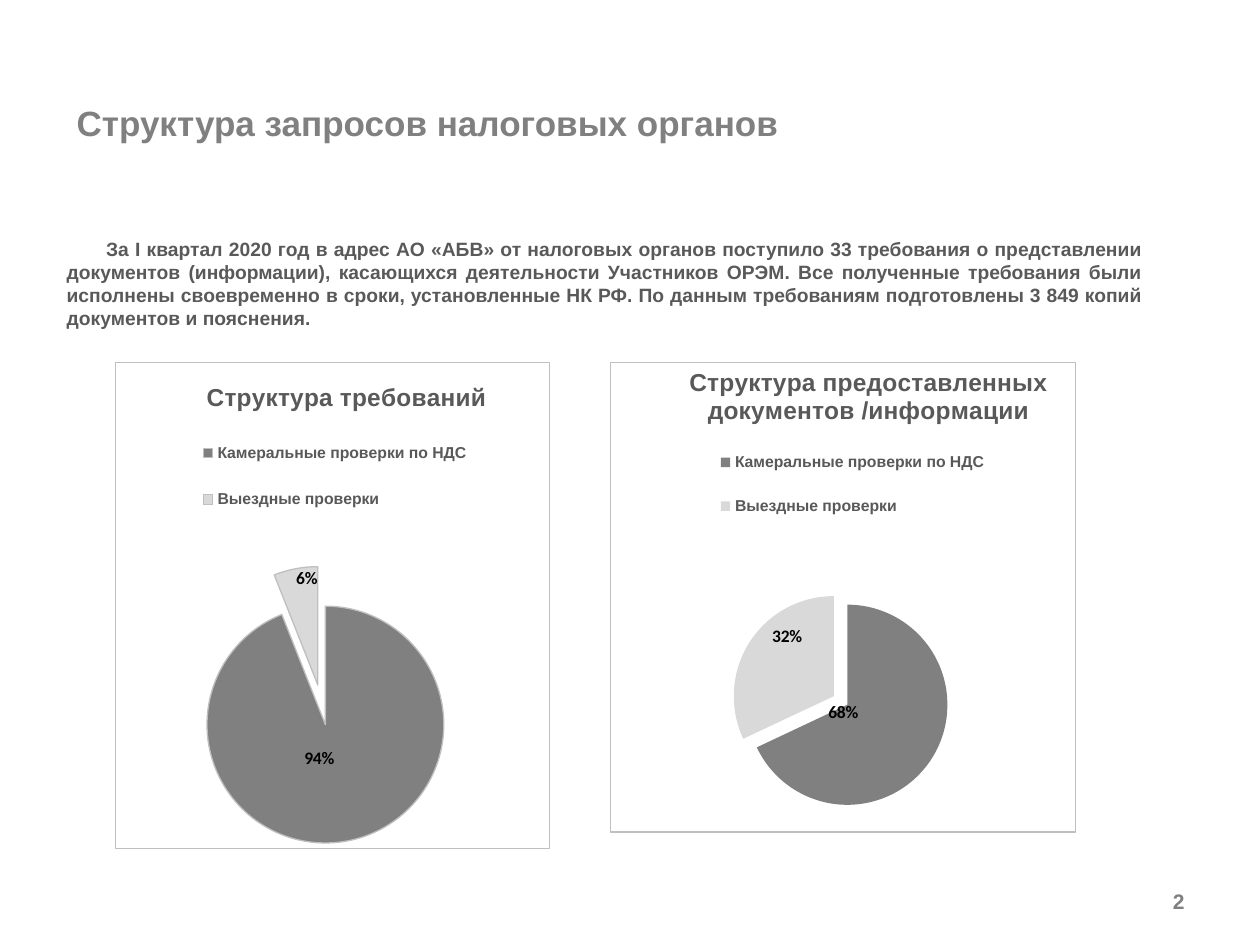
from copy import deepcopy

from lxml import etree
from pptx import Presentation
from pptx import util as u
from pptx.chart import data as chart_data
from pptx.dml.color import RGBColor
from pptx.enum import chart as ch, text
from pptx.oxml import ns

CATEGORIES = ("Камеральные проверки по НДС", "Выездные проверки")
SLICES = ("808080", "D9D9D9")
BORDER = "BFBFBF"
DARK = "595959"


def color(value):
    """Turn a hex string into a colour."""
    return RGBColor.from_string(value)


def style(font, size, value, name="Arial"):
    """Make a font bold with the given size, colour and face."""
    font.size, font.bold, font.name = u.Pt(size), True, name
    font.color.rgb = color(value)


def add_text(page, bounds, words, size, value, align, anchor):
    """Add a one-paragraph text box and return its paragraph."""
    box = page.shapes.add_textbox(*map(u.Pt, bounds))
    frame = box.text_frame
    frame.word_wrap, frame.vertical_anchor = True, anchor
    para = frame.paragraphs[0]
    para.alignment = align
    span = para.add_run()
    span.text = words
    style(span.font, size, value)
    return para


def place(element, index, fractions, modes=("xMode", "yMode"), inner=False):
    """Give a chart part a manual layout in fractions of the chart."""
    for old in element.findall(ns.qn("c:layout")):
        element.remove(old)
    layout = etree.Element(ns.qn("c:layout"))
    manual = etree.SubElement(layout, ns.qn("c:manualLayout"))
    pairs = [("layoutTarget", "inner")] if inner else []
    pairs += [(mode, "edge") for mode in modes]
    pairs += zip("xywh", map(str, fractions))
    for tag, value in pairs:
        etree.SubElement(manual, ns.qn(f"c:{tag}")).set("val", value)
    element.insert(index, layout)


def add_border(chart):
    """Draw a thin frame around the chart area."""
    props = etree.Element(ns.qn("c:spPr"))
    etree.SubElement(props, ns.qn("a:noFill"))
    line = etree.SubElement(props, ns.qn("a:ln"), w=str(u.Pt(0.75)))
    fill = etree.SubElement(line, ns.qn("a:solidFill"))
    etree.SubElement(fill, ns.qn("a:srgbClr"), val=BORDER)
    chart.element.find(ns.qn("c:chart")).addnext(props)


def paint_slices(series, explosion, outlined):
    """Colour the slices and pull them apart."""
    for index, value in enumerate(SLICES):
        point = series.points[index].format
        point.fill.solid()
        point.fill.fore_color.rgb = color(value)
        if outlined:
            point.line.color.rgb = color(BORDER)
            point.line.width = u.Pt(0.75)
        else:
            point.line.fill.background()
    blast = etree.Element(ns.qn("c:explosion"), val=str(explosion))
    series._element.find(ns.qn("c:dPt")).addprevious(blast)


def add_percents(series, shifts):
    """Label each slice with its percentage, shifted from its centre."""
    labels = series.data_labels
    labels.show_percentage, labels.show_value = True, False
    labels.number_format, labels.number_format_is_linked = "0%", False
    labels.position = ch.XL_LABEL_POSITION.CENTER
    style(labels.font, 10, "000000", "Calibri")
    group = labels._element
    shared = [part for part in group
              if part.tag != ns.qn("c:showLeaderLines")]
    for index, shift in enumerate(shifts):
        label = etree.Element(ns.qn("c:dLbl"))
        etree.SubElement(label, ns.qn("c:idx"), val=str(index))
        label.extend(deepcopy(shared))
        place(label, 1, shift, modes=())
        group.insert(index, label)


def add_pie(page, bounds, title, values, explosion, outlined, layouts,
            shifts):
    """Add a framed pie chart with percent labels and a top legend."""
    source = chart_data.CategoryChartData(number_format="0")
    source.categories = CATEGORIES
    source.add_series("Series 1", values)
    chart = page.shapes.add_chart(
        ch.XL_CHART_TYPE.PIE, *map(u.Pt, bounds), source).chart
    style(chart.font, 9, DARK)
    add_border(chart)

    span = chart.chart_title.text_frame.paragraphs[0].add_run()
    span.text = title
    style(span.font, 14, DARK)
    chart.has_legend = True
    legend = chart.legend
    legend.position = ch.XL_LEGEND_POSITION.TOP
    legend.include_in_layout = False
    style(legend.font, 9, DARK)

    plot = chart.plots[0]
    plot.vary_by_categories = True
    paint_slices(plot.series[0], explosion, outlined)
    add_percents(plot.series[0], shifts)

    title_at, legend_at, plot_at = layouts
    place(chart.chart_title._element, 1, title_at)
    place(legend._element, 1, legend_at)
    area = chart.element.find(".//" + ns.qn("c:plotArea"))
    place(area, 0, plot_at, inner=True)


def main():
    """Build the slide and save the deck."""
    deck = Presentation()
    deck.slide_width, deck.slide_height = u.Pt(720), u.Pt(540)
    page = deck.slides.add_slide(deck.slide_layouts[6])
    align, anchor = text.PP_ALIGN, text.MSO_ANCHOR

    summary = add_text(
        page, (31, 117, 629.3, 90),
        "За I квартал 2020 год в адрес АО «АБВ» от налоговых органов "
        "поступило 33 требования о представлении документов (информации), "
        "касающихся деятельности Участников ОРЭМ. Все полученные требования "
        "были исполнены своевременно в сроки, установленные НК РФ. По данным "
        "требованиям подготовлены 3 849 копий документов и пояснения.",
        11, DARK, align.JUSTIFY, anchor.MIDDLE)
    summary._p.get_or_add_pPr().set("indent", str(u.Pt(22.5)))

    add_pie(page, (65.5, 206.6, 249, 278.6), "Структура требований",
            (94, 6), 17, True,
            ((0.2, 0.03), (0.18, 0.11, 0.65, 0.25),
             (0.02, 0.42, 0.91, 0.57)),
            ((-0.04, -0.05), (0, -0.1)))
    add_pie(page, (348.5, 206.6, 266.4, 269.3),
            "Структура предоставленных документов /информации",
            (68, 32), 8, False,
            ((0.16, 0), (0.22, 0.14, 0.6, 0.24),
             (0.08, 0.49, 0.83, 0.46)),
            ((-0.1, -0.04), (-0.01, -0.07)))
    add_text(page, (516.2, 500.4, 167.8, 28.8), "2", 12, "7F7F7F",
             align.RIGHT, anchor.MIDDLE)
    add_text(page, (36.7, 54.7, 629.3, 53.3),
             "Структура запросов налоговых органов", 20, "808080",
             align.LEFT, anchor.TOP)
    deck.save("out.pptx")


if __name__ == "__main__":
    main()
